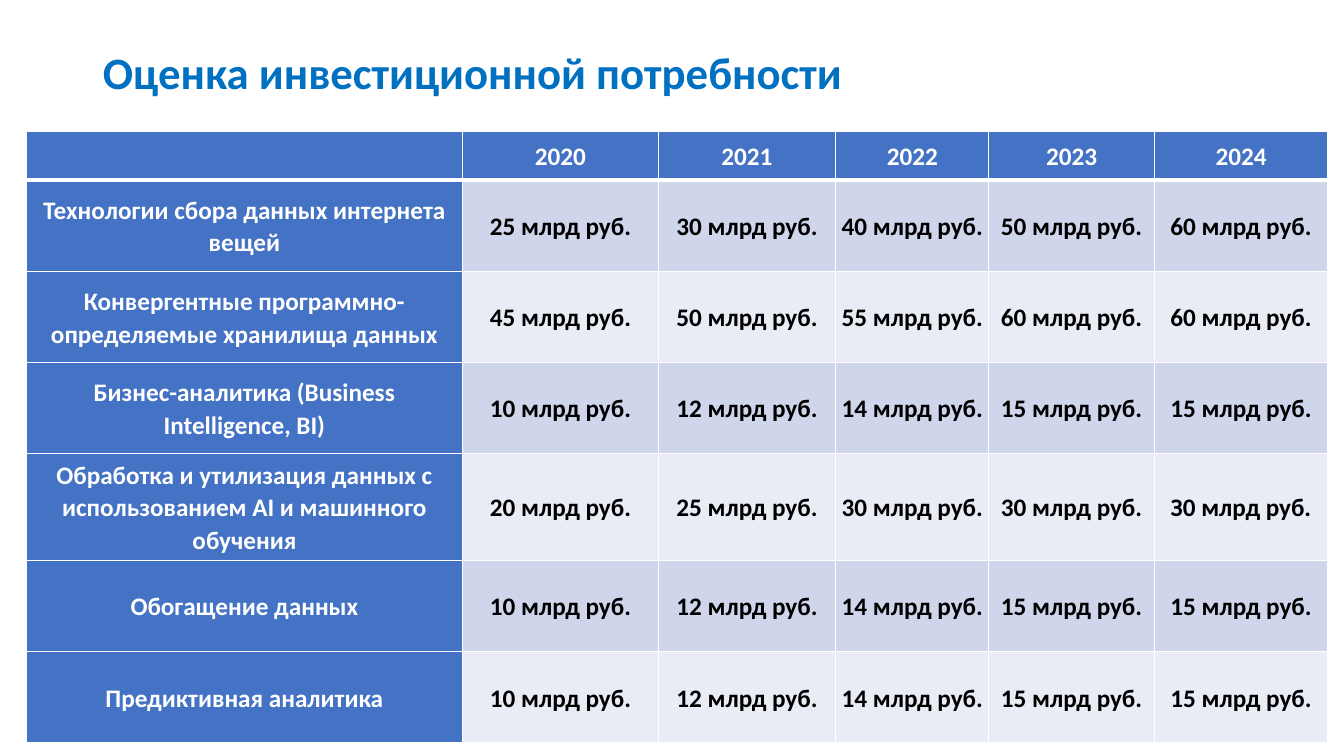
from dataclasses import dataclass

from lxml.etree import SubElement
from pptx import Presentation
from pptx.dml.color import RGBColor
from pptx.enum.text import MSO_ANCHOR, PP_ALIGN
from pptx.oxml.ns import qn
from pptx.util import Cm, Pt


@dataclass(frozen=True)
class Theme:
    font: str = "Calibri"
    title_size: int = 32
    table_size: int = 18
    title: str = "0070C0"
    header: str = "4472C4"
    header_text: str = "FFFFFF"
    value_text: str = "000000"
    bands: tuple = ("CFD5EA", "E9EBF5")
    border: str = "FFFFFF"
    thin: int = 1
    thick: int = 3


THEME = Theme()
TITLE = "Оценка инвестиционной потребности"
YEARS = ["2020", "2021", "2022", "2023", "2024"]
UNIT = "млрд руб."
INVESTMENTS = {
    "Технологии сбора данных интернета вещей": "25 30 40 50 60",
    "Конвергентные программно-определяемые хранилища данных": "45 50 55 60 60",
    "Бизнес-аналитика (Business Intelligence, BI)": "10 12 14 15 15",
    "Обработка и утилизация данных с использованием AI и машинного обучения": "20 25 30 30 З0",
    "Обогащение данных": "10 12 14 15 15",
    "Предиктивная аналитика": "10 12 14 15 15",
}
COLUMN_WIDTHS = [Cm(width) for width in (11, 4.93, 4.47, 3.86, 4.17, 4.37)]
HEADER_HEIGHT = Cm(1.24)
ROW_HEIGHT = Cm(2.3)
CELL_MARGIN = Cm(0.1)


def style_paragraph(para, size, color, align, line_spacing):
    para.alignment = align
    para.line_spacing = line_spacing
    para.font.name = THEME.font
    para.font.size = Pt(size)
    para.font.bold = True
    para.font.color.rgb = RGBColor.from_string(color)


def add_title(page):
    box = page.shapes.title
    box.left, box.top, box.width, box.height = Cm(2.34), Cm(0.05), Cm(29.21), Cm(3.68)
    box.text_frame.text = TITLE
    box.text_frame.vertical_anchor = MSO_ANCHOR.MIDDLE
    style_paragraph(box.text_frame.paragraphs[0], THEME.title_size, THEME.title, PP_ALIGN.LEFT, 0.9)


def set_borders(cell, top, bottom):
    properties = cell._tc.get_or_add_tcPr()
    widths = {"lnL": THEME.thin, "lnR": THEME.thin, "lnT": top, "lnB": bottom}
    for side, width in widths.items():
        line = SubElement(properties, qn(f"a:{side}"), w=str(Pt(width)))
        fill = SubElement(line, qn("a:solidFill"))
        SubElement(fill, qn("a:srgbClr"), val=THEME.border)


def fill_cell(cell, text, row, column):
    is_header = row == 0 or column == 0
    set_borders(
        cell,
        top=THEME.thick if row == 1 else THEME.thin,
        bottom=THEME.thick if row == 0 else THEME.thin,
    )
    cell.fill.solid()
    color = THEME.header if is_header else THEME.bands[(row - 1) % 2]
    cell.fill.fore_color.rgb = RGBColor.from_string(color)
    cell.vertical_anchor = MSO_ANCHOR.MIDDLE
    cell.margin_left = cell.margin_right = cell.margin_top = cell.margin_bottom = CELL_MARGIN
    cell.text = text
    para = cell.text_frame.paragraphs[0]
    text_color = THEME.header_text if is_header else THEME.value_text
    style_paragraph(para, THEME.table_size, text_color, PP_ALIGN.CENTER, 1.07)
    para.space_after = Pt(3.8)


def add_investment_table(page):
    rows = [["", *YEARS]]
    for direction, amounts in INVESTMENTS.items():
        rows.append([direction, *(f"{amount} {UNIT}" for amount in amounts.split())])
    heights = [HEADER_HEIGHT] + [ROW_HEIGHT] * len(INVESTMENTS)
    table = page.shapes.add_table(
        len(rows), len(COLUMN_WIDTHS), Cm(0.66), Cm(3.3), sum(COLUMN_WIDTHS), sum(heights)
    ).table
    for column, width in zip(table.columns, COLUMN_WIDTHS):
        column.width = width
    for row, height in zip(table.rows, heights):
        row.height = height
    for row, texts in enumerate(rows):
        for column, text in enumerate(texts):
            fill_cell(table.cell(row, column), text, row, column)


def main():
    deck = Presentation()
    deck.slide_width, deck.slide_height = Cm(33.87), Cm(19.05)
    page = deck.slides.add_slide(deck.slide_layouts.get_by_name("Title Only"))
    add_title(page)
    add_investment_table(page)
    deck.save("out.pptx")


if __name__ == "__main__":
    main()
